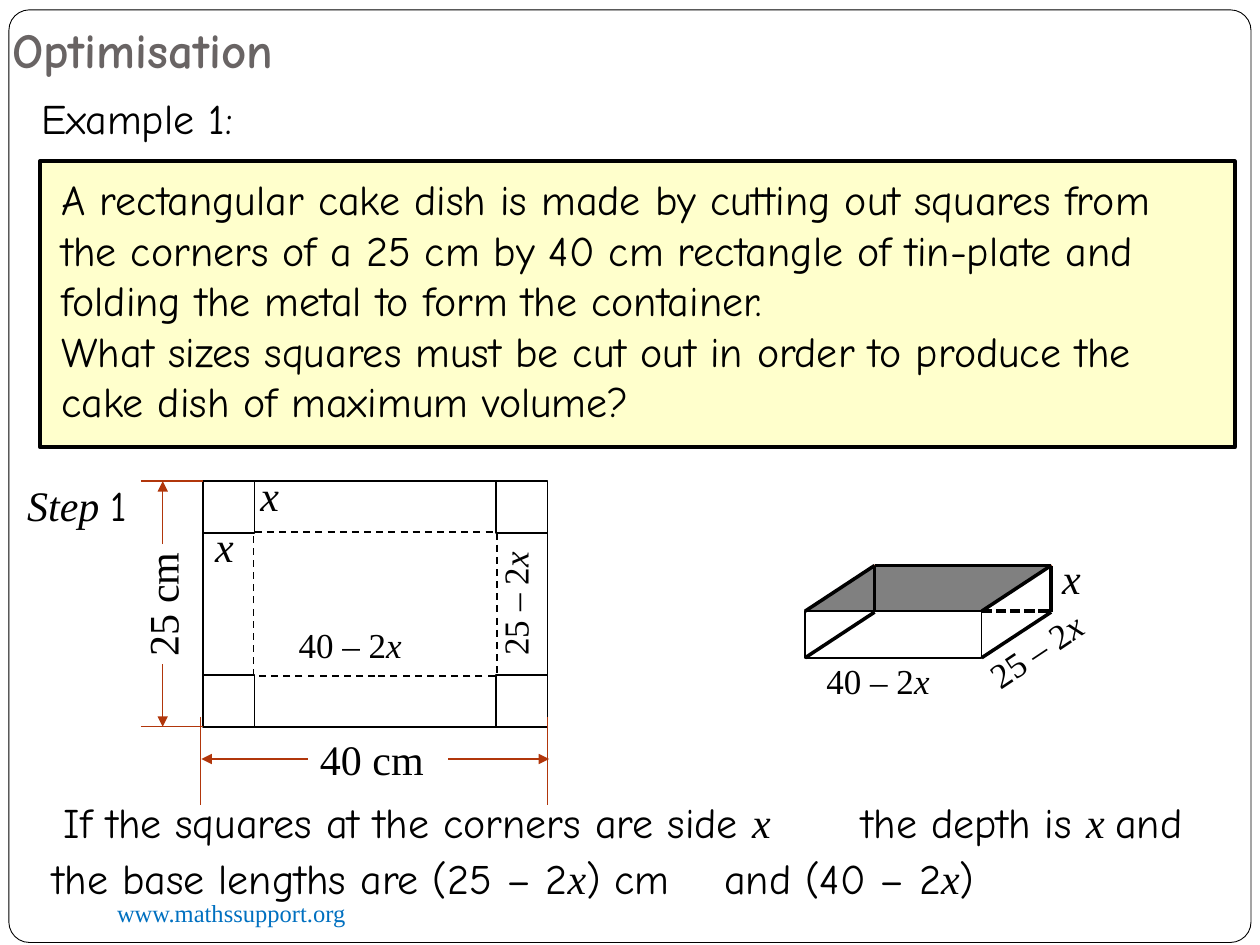
from lxml.etree import SubElement
from pptx import Presentation
from pptx.dml.color import RGBColor
from pptx.enum.dml import MSO_LINE
from pptx.enum.shapes import MSO_CONNECTOR, MSO_SHAPE
from pptx.enum.text import MSO_ANCHOR, MSO_AUTO_SIZE, PP_ALIGN
from pptx.oxml.ns import qn
from pptx.util import Cm, Pt

# Content; all lengths are centimetres
HAND, SERIF = "Comic Neue", "Times New Roman"
BLACK, WHITE, GREY, CREAM = "000000", "FFFFFF", "808080", "FFFFCC"
TITLE_GREY, RUST, LINK_BLUE = "696464", "B1360B", "0070C0"

title_text = "Optimisation"
problem = [
    "A rectangular cake dish is made by cutting out squares from the corners of "
    "a 25 cm by 40 cm rectangle of tin-plate and folding the metal to form the container.",
    "What sizes squares must be cut out in order to produce the cake dish of maximum volume?",
]
X = ("x", SERIF, True)
WIDTH_LABEL = [("25 – 2", SERIF, False), X]
LENGTH_LABEL = [("40 – 2", SERIF, False), X]

# Sentences: left, top, width, runs of (text, font, italic)
sentences = [
    (0.58, 1.75, 14.78, [("Example 1:", HAND, False)]),
    (1.04, 15.93, 18.31, [("If the squares at the corners are side ", HAND, False), X]),
    (17.12, 15.93, 8.18, [("the depth is ", HAND, False), ("x ", SERIF, True),
                          ("and", HAND, False)]),
    (0.81, 17.07, 13.94, [("the base lengths are (25 – 2", HAND, False), X,
                          (") cm", HAND, False)]),
    (14.35, 17.07, 5.59, [("and (40 – 2", HAND, False), X, (")", HAND, False)]),
]
# Diagram labels: left, top, width, size, rotation, runs
labels = [
    (0.3, 9.55, 2.59, 24, 0, [("Step ", SERIF, True), ("1", HAND, False)]),
    (5, 9.35, 0.89, 24, 0, [X]),
    (4.09, 10.36, 0.89, 24, 0, [X]),
    (5.77, 12.45, 2.79, 20, 0, LENGTH_LABEL),
    (8.99, 11.51, 2.79, 20, 270, WIDTH_LABEL),
    (1.96, 11.53, 2.62, 24, 270, [("25 cm", SERIF, False)]),
    (21.16, 11.02, 0.89, 24, 0, [X]),
    (16.41, 13.18, 2.79, 20, 0, LENGTH_LABEL),
    (19.58, 12.5, 2.79, 20, 326.2, WIDTH_LABEL),
]

presentation = Presentation()
presentation.slide_width, presentation.slide_height = Cm(25.4), Cm(19.05)
slide = presentation.slides.add_slide(presentation.slide_layouts[5])


def color(hex_code):
    return RGBColor.from_string(hex_code)


def add_box(left, top, width, height, fill=WHITE, line=BLACK, weight=1,
            kind=MSO_SHAPE.RECTANGLE):
    box = slide.shapes.add_shape(kind, Cm(left), Cm(top), Cm(width), Cm(height))
    box.shadow.inherit = False
    if fill:
        box.fill.solid()
        box.fill.fore_color.rgb = color(fill)
    else:
        box.fill.background()
    if line:
        box.line.color.rgb = color(line)
        box.line.width = Pt(weight)
    else:
        box.line.fill.background()
    return box


def style(run, font, size, italic=False, hex_code=BLACK, bold=False):
    run.font.name, run.font.size = font, Pt(size)
    run.font.italic, run.font.bold = italic, bold
    run.font.color.rgb = color(hex_code)


def add_text(left, top, width, runs, size=24, wrap=True, rotation=0, hex_code=BLACK):
    height = 1.28 if size == 24 else 1.12
    text = slide.shapes.add_textbox(Cm(left), Cm(top), Cm(width), Cm(height))
    text.rotation = rotation
    text.text_frame.word_wrap = wrap
    text.text_frame.auto_size = MSO_AUTO_SIZE.SHAPE_TO_FIT_TEXT
    for words, font, italic in runs:
        run = text.text_frame.paragraphs[0].add_run()
        run.text = words
        style(run, font, size, italic, hex_code)
    return text


def add_line(start, end, hex_code=BLACK, weight=2, arrow=False):
    line = slide.shapes.add_connector(MSO_CONNECTOR.STRAIGHT,
                                      *(Cm(value) for value in (*start, *end)))
    line.line.color.rgb = color(hex_code)
    line.line.width = Pt(weight)
    if arrow:
        SubElement(line.line._get_or_add_ln(), qn("a:tailEnd"), type="triangle")
    SubElement(line.element.spPr, qn("a:effectLst"))
    return line


# Page border, web address and title
border = add_box(0.18, 0.2, 25.04, 18.8, weight=0.5, kind=MSO_SHAPE.ROUNDED_RECTANGLE)
border.adjustments[0] = 0.022
add_text(2.11, 17.98, 8.26, [("www.mathssupport.org", SERIF, False)], 14, hex_code=LINK_BLUE)

title = slide.shapes.title
border.element.addnext(title.element)
title.left, title.top, title.width, title.height = Cm(0), Cm(0.13), Cm(21.59), Cm(1.7)
heading = title.text_frame
heading.text = title_text
heading.auto_size = MSO_AUTO_SIZE.NONE
heading.vertical_anchor = MSO_ANCHOR.BOTTOM
heading.margin_left = heading.margin_right = heading.margin_bottom = Cm(0.25)
heading.margin_top = Cm(0.13)
heading.paragraphs[0].alignment = PP_ALIGN.LEFT
style(heading.paragraphs[0].runs[0], HAND, 28, hex_code=TITLE_GREY, bold=True)

# Problem statement
add_box(0.81, 3.25, 24.08, 5.77, CREAM, weight=2.25)
statement = add_box(0.99, 3.38, 23.7, 5.38, CREAM, line=None).text_frame
statement.word_wrap = True
statement.vertical_anchor = MSO_ANCHOR.TOP
statement.text = "\n".join(problem)
for paragraph in statement.paragraphs:
    paragraph.alignment = PP_ALIGN.LEFT
    style(paragraph.runs[0], HAND, 24)

# Tin-plate net: a 3 by 3 grid with square corners
net_left, net_top, net_width, net_height, square = 4.09, 9.7, 6.95, 4.95, 1.04
net_right, net_bottom = net_left + net_width, net_top + net_height
columns = [(net_left, square), (net_left + square, net_width - 2 * square),
           (net_right - square, square)]
rows = [(net_top, square), (net_top + square, net_height - 2 * square),
        (net_bottom - square, square)]
for column, row in [(0, 1), (2, 1), (1, 0), (1, 2)]:
    (left, width), (top, height) = columns[column], rows[row]
    add_box(left, top, width, height)
(left, width), (top, height) = columns[1], rows[1]
overlap = 0.02
base = add_box(left - overlap, top - overlap, width + 2 * overlap, height + 2 * overlap)
base.line.dash_style = MSO_LINE.DASH
for left, width in columns[::2]:
    for top, height in rows[::2]:
        add_box(left, top, width, height)

# Dimension lines of the net
for x in (net_left - 0.05, net_right):
    add_line((x, 14.45), (x, 16.23), RUST, 0.75)
for y in (net_top, net_bottom):
    add_line((2.84, y), (4.1, y), RUST, 0.75)
for start, end in [(10.97, net_top), (13.39, net_bottom)]:
    add_line((3.28, start), (3.28, end), RUST, 0.75, arrow=True)
length = add_text(6.2, 14.66, 2.84, [("40 cm", SERIF, False)], wrap=False)
for start, end, side in [(6.2, net_left - 0.03, 1), (9.04, net_right + 0.03, 3)]:
    add_line((start, 15.3), (end, 15.3), RUST, 0.75, arrow=True).begin_connect(length, side)

# Folded dish: front face pushed back by a slant
front_left, front_top, front_width, depth = 16.23, 12.32, 3.56, 0.94
slant_x, slant_y = 1.4, 0.92
front_right, front_bottom = front_left + front_width, front_top + depth
back_left, back_right = front_left + slant_x, front_right + slant_x
back_top, back_bottom = front_top - slant_y, front_bottom - slant_y
opening = add_box(front_left, back_top, front_width + slant_x, slant_y, GREY, "9C3511",
                  kind=MSO_SHAPE.PARALLELOGRAM)
opening.adjustments[0] = slant_x / slant_y
add_box(front_left, front_top, front_width, depth, fill=None)
for start, end in [
    ((front_left, front_bottom), (back_left, back_bottom)),
    ((front_right, front_bottom), (back_right, back_bottom)),
    ((front_right, front_top), (back_right, back_top)),
    ((front_left, front_top), (back_left, back_top)),
    ((back_left, back_top), (back_right, back_top)),
    ((back_right, back_top), (back_right, back_bottom)),
    ((back_left, back_top), (back_left, back_bottom)),
]:
    add_line(start, end)
hidden_edge = add_line((front_right, front_top), (back_right, front_top))
hidden_edge.line.dash_style = MSO_LINE.SQUARE_DOT

# Labels and sentences
for left, top, width, size, rotation, runs in labels:
    add_text(left, top, width, runs, size, wrap=False, rotation=rotation)
for left, top, width, runs in sentences:
    add_text(left, top, width, runs)

presentation.save("out.pptx")
